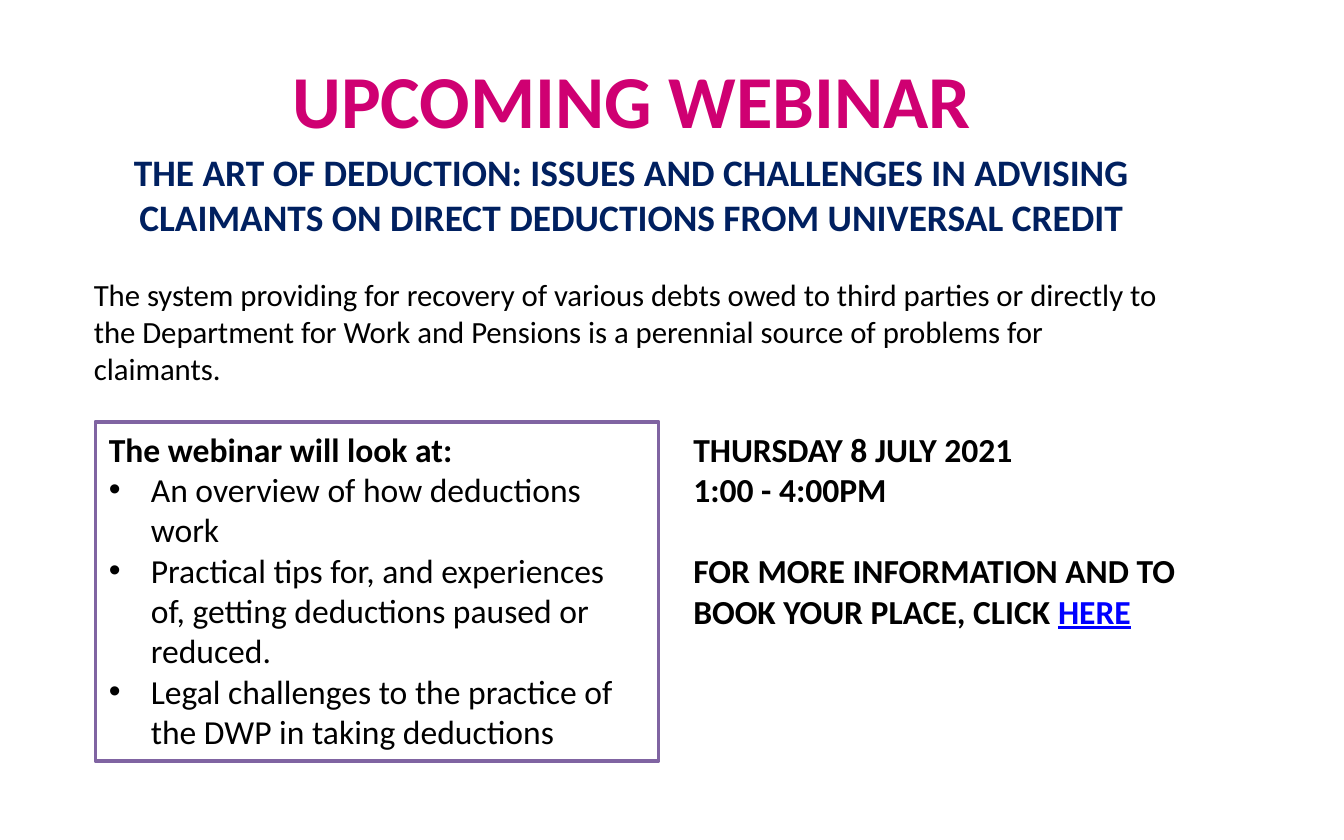
from lxml.etree import SubElement
from pptx import Presentation
from pptx.dml.color import RGBColor
from pptx.enum.shapes import MSO_SHAPE
from pptx.enum.text import MSO_ANCHOR, MSO_AUTO_SIZE, PP_ALIGN
from pptx.oxml.ns import qn
from pptx.util import Pt

COLORS = {"pink": "CF0072", "navy": "002060", "black": "000000",
          "purple": "8064A2", "link": "0000FF", "white": "FFFFFF"}
FONT = "Calibri"
BULLET_INDENT = 22.5

TITLE = [{"runs": [("UPCOMING WEBINAR", "pink", True)], "size": 40, "center": True}]
INTRODUCTION = [
    {"runs": [("THE ART OF DEDUCTION: ISSUES AND CHALLENGES IN ADVISING CLAIMANTS "
               "ON DIRECT DEDUCTIONS FROM UNIVERSAL CREDIT", "navy", True)],
     "size": 20, "center": True},
    {"runs": [("The system providing for recovery of various debts owed to third parties or "
               "directly to the Department for Work and Pensions is a perennial source of "
               "problems for claimants.", "black", False)],
     "size": 16.5, "before": 20},
]
TOPICS = [
    "An overview of how deductions work",
    "Practical tips for, and experiences of, getting deductions paused or reduced.",
    "Legal challenges to the practice of the DWP in taking deductions",
]
AGENDA = [{"runs": [("The webinar will look at:", "black", True)]}] + [
    {"runs": [(topic, "black", False)], "bullet": True} for topic in TOPICS]
BOOKING = [
    {"runs": [("THURSDAY 8 JULY 2021", "black", True)]},
    {"runs": [("1:00 - 4:00PM", "black", True)]},
    {"runs": [("FOR MORE INFORMATION AND TO BOOK YOUR PLACE, CLICK ", "black", True),
              ("HERE", "link", True)], "before": 22},
]


def color(name):
    return RGBColor.from_string(COLORS[name])


def place(shape, left, top, width, height):
    shape.left, shape.top, shape.width, shape.height = map(Pt, (left, top, width, height))


def set_bullet(paragraph, bulleted):
    properties = paragraph._p.get_or_add_pPr()
    indent = Pt(BULLET_INDENT) if bulleted else 0
    properties.set("marL", str(indent))
    properties.set("indent", str(-indent))
    if bulleted:
        SubElement(properties, qn("a:buFont"), typeface="Arial")
        SubElement(properties, qn("a:buChar"), char="•")
    else:
        SubElement(properties, qn("a:buNone"))


def write(shape, paragraphs):
    frame = shape.text_frame
    frame.word_wrap = True
    frame.auto_size = MSO_AUTO_SIZE.NONE
    frame.vertical_anchor = MSO_ANCHOR.TOP
    for index, content in enumerate(paragraphs):
        paragraph = frame.add_paragraph() if index else frame.paragraphs[0]
        set_bullet(paragraph, content.get("bullet", False))
        paragraph.alignment = PP_ALIGN.CENTER if content.get("center") else PP_ALIGN.LEFT
        paragraph.space_before = Pt(content.get("before", 0))
        for text, color_name, bold in content["runs"]:
            run = paragraph.add_run()
            run.text = text
            run.font.name = FONT
            run.font.size = Pt(content.get("size", 18))
            run.font.bold = bold
            run.font.underline = color_name == "link"
            run.font.color.rgb = color(color_name)


def main():
    """Build the webinar announcement slide."""
    presentation = Presentation()
    presentation.slide_width, presentation.slide_height = Pt(720), Pt(450)
    slide = presentation.slides.add_slide(presentation.slide_layouts[1])

    title, agenda = slide.placeholders
    place(title, 43.2, 25.2, 590.4, 55.4)
    write(title, TITLE)

    introduction = slide.shapes.add_textbox(Pt(43.2), Pt(76.3), Pt(590.4), Pt(140))
    write(introduction, INTRODUCTION)

    place(agenda, 51.1, 226, 301.7, 181.6)
    agenda.line.color.rgb = color("purple")
    agenda.line.width = Pt(2)
    write(agenda, AGENDA)

    booking = slide.shapes.add_shape(MSO_SHAPE.RECTANGLE, Pt(364.3), Pt(226), Pt(301.7), Pt(116.6))
    booking.shadow.inherit = False
    booking.line.fill.background()
    write(booking, BOOKING)

    for panel in (agenda, booking):
        panel.fill.solid()
        panel.fill.fore_color.rgb = color("white")

    presentation.save("out.pptx")


if __name__ == "__main__":
    main()
